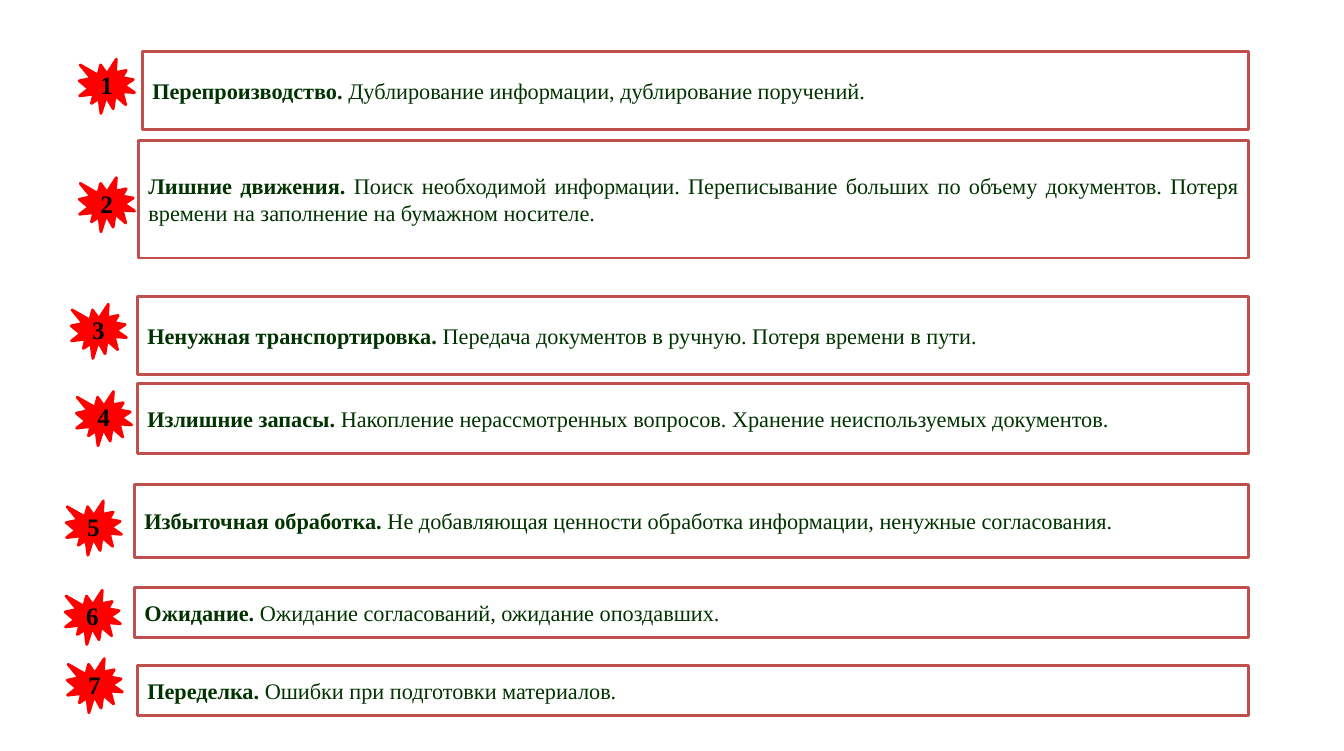
from pptx import Presentation
from pptx.dml.color import RGBColor
from pptx.enum.shapes import MSO_SHAPE
from pptx.enum.text import MSO_ANCHOR, PP_ALIGN
from pptx.util import Inches, Pt

RECT, SEAL = MSO_SHAPE.RECTANGLE, MSO_SHAPE.EXPLOSION1
MIDDLE = MSO_ANCHOR.MIDDLE
LEFT, CENTER, JUSTIFY = PP_ALIGN.LEFT, PP_ALIGN.CENTER, PP_ALIGN.JUSTIFY

WIDTH, HEIGHT = Inches(13.39), Inches(7.48)
FONT = "Times New Roman"
COLORS = {"paper": "FFFFFF", "border": "C0504D", "seal": "FF0000",
          "text": "003300", "black": "000000"}
BOX_RIGHT = 92.91
SEAL_SIZE = (4.11, 7.22)

# Each waste: box (left, top, height) and seal (left, top) in percent of the slide.
WASTES = [
    ((10.6, 6.82, 10.43), (5.9, 7.89), "Перепроизводство. ",
     "Дублирование информации, дублирование поручений."),
    ((10.31, 18.72, 15.64), (5.9, 23.66), "Лишние движения. ",
     "Поиск необходимой информации. Переписывание больших по объему документов. "
     "Потеря времени на заполнение на бумажном носителе."),
    ((10.23, 39.44, 10.43), (5.3, 40.51), "Ненужная транспортировка. ",
     "Передача документов в ручную. Потеря времени в пути."),
    ((10.23, 51.07, 9.36), (5.68, 52.14), "Излишние запасы. ",
     "Накопление нерассмотренных вопросов. Хранение неиспользуемых документов."),
    ((10.01, 64.57, 9.63), (4.93, 66.71), "Избыточная обработка. ",
     "Не добавляющая ценности обработка информации, ненужные согласования."),
    ((10.01, 78.21, 6.68), (4.85, 78.61), "Ожидание. ",
     "Ожидание согласований, ожидание опоздавших."),
    ((10.23, 88.64, 6.68), (5.0, 87.7), "Переделка. ",
     "Ошибки при подготовки материалов."),
]


def color(name):
    """Return the named colour."""
    return RGBColor.from_string(COLORS[name])


def add_panel(s, kind, left, top, width, height, fill, line, align):
    """Add a filled, outlined shape placed in percent; return its shape and paragraph."""
    sp = s.shapes.add_shape(kind, round(WIDTH * left / 100), round(HEIGHT * top / 100),
                            round(WIDTH * width / 100), round(HEIGHT * height / 100))
    sp.shadow.inherit = False
    sp.fill.solid()
    sp.fill.fore_color.rgb = color(fill)
    sp.line.color.rgb = color(line)
    sp.line.width = Pt(2)
    tf = sp.text_frame
    tf.word_wrap = True
    tf.vertical_anchor = MIDDLE
    p = tf.paragraphs[0]
    p.alignment = align
    return sp, p


def add_run(p, text, size, tint, bold):
    """Append one formatted run."""
    r = p.add_run()
    r.text = text
    r.font.name = FONT
    r.font.size = Pt(size)
    r.font.bold = bold
    r.font.color.rgb = color(tint)


def add_box(s, place, term, detail):
    """Add the box with a bold term and its explanation."""
    left, top, height = place
    _, p = add_panel(s, RECT, left, top, BOX_RIGHT - left, height,
                     "paper", "border", JUSTIFY)
    add_run(p, term, 16, "text", True)
    add_run(p, detail, 16, "text", False)


def add_seal(s, place, number):
    """Add the numbered star burst."""
    sp, p = add_panel(s, SEAL, *place, *SEAL_SIZE, "seal", "seal", CENTER)
    tf = sp.text_frame
    tf.margin_left = tf.margin_right = tf.margin_top = tf.margin_bottom = 0
    add_run(p, str(number), 18, "black", True)


def main():
    """Build the slide of seven wastes."""
    prs = Presentation()
    prs.slide_width, prs.slide_height = WIDTH, HEIGHT
    s = prs.slides.add_slide(prs.slide_layouts[6])
    for number, (box, seal, term, detail) in enumerate(WASTES, 1):
        add_box(s, box, term, detail)
        add_seal(s, seal, number)
    prs.save("out.pptx")


if __name__ == "__main__":
    main()
